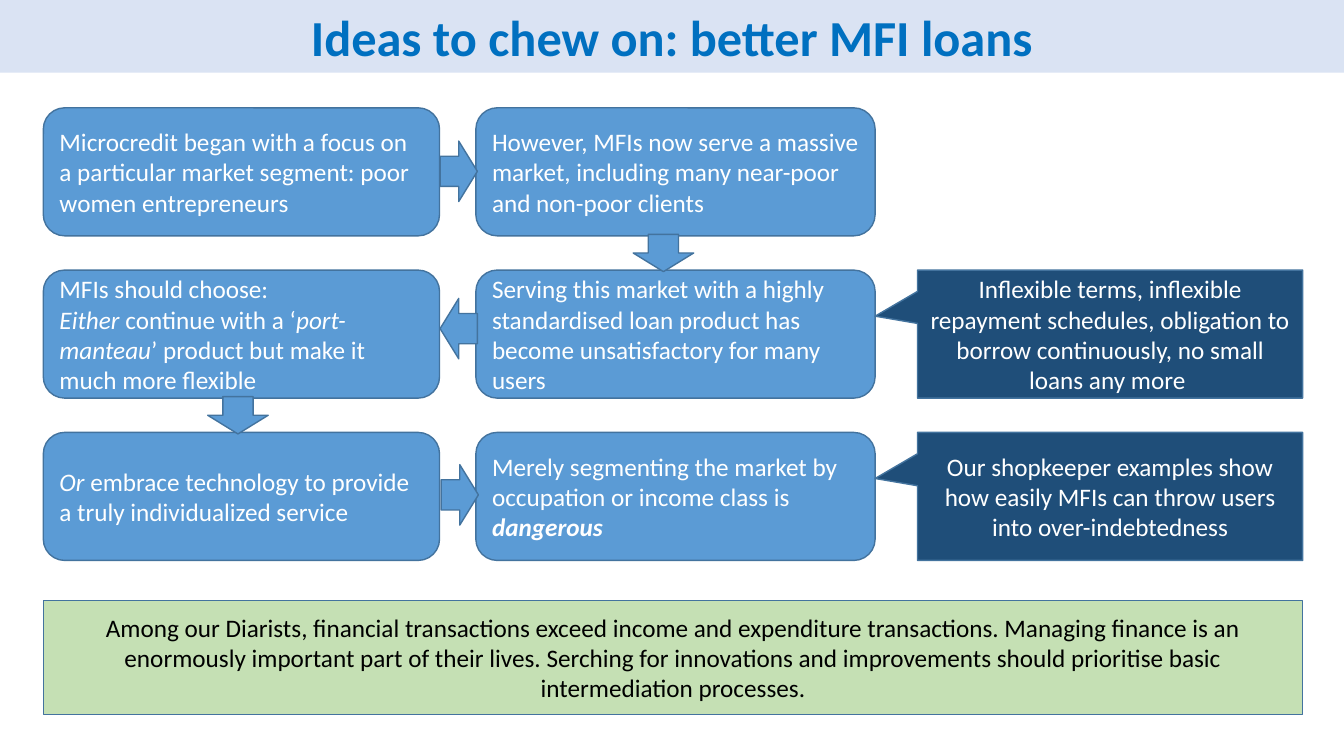
from pptx import Presentation
from pptx.dml.color import RGBColor
from pptx.enum.shapes import MSO_SHAPE as Shape
from pptx.enum.text import MSO_ANCHOR as Anchor, MSO_AUTO_SIZE as Fit, PP_ALIGN as Align
from pptx.util import Inches, Pt

BLUE = RGBColor(0x5B, 0x9B, 0xD5)
NAVY = RGBColor(0x1F, 0x4E, 0x79)
EDGE = RGBColor(0x43, 0x73, 0x9E)
GREEN = RGBColor(0xC5, 0xE0, 0xB4)
PALE = RGBColor(0xDA, 0xE3, 0xF3)
AZURE = RGBColor(0x00, 0x70, 0xC0)
WHITE = RGBColor(0xFF, 0xFF, 0xFF)
BLACK = RGBColor(0x00, 0x00, 0x00)

TITLE = "Ideas to chew on: better MFI loans"
# Each step: column, row, paragraphs of (text, style) runs
STEPS = [
    (0, 0, [[("Microcredit began with a focus on a particular market segment: "
              "poor women entrepreneurs", "")]]),
    (1, 0, [[("However, MFIs now serve a massive market, including many "
              "near-poor and non-poor clients", "")]]),
    (1, 1, [[("Serving this market with a highly standardised loan product "
              "has become unsatisfactory for many users", "")]]),
    (0, 1, [[("MFIs should choose:", "")],
            [("Either ", "i"), ("continue with a ‘", ""), ("port-manteau", "i"),
             ("’ product but make it much more flexible", "")]]),
    (0, 2, [[("Or", "i"),
             (" embrace technology to provide a truly individualized service", "")]]),
    (1, 2, [[("Merely segmenting the market by occupation or income class is ", ""),
             ("dangerous", "bi")]]),
]
NOTES = [
    (1, "Inflexible terms, inflexible repayment schedules, obligation to "
        "borrow continuously, no small loans any more "),
    (2, "Our shopkeeper examples show how easily MFIs can throw users "
        "into over-indebtedness"),
]
CLOSE = ("Among our Diarists, financial transactions exceed income and expenditure "
         "transactions. Managing finance is an enormously important part of their "
         "lives. Serching for innovations and improvements should prioritise basic "
         "intermediation processes.")
ARROWS = [(4.55, 1.7, 0), (6.58, 2.51, 90), (4.55, 3.26, 180),
          (2.36, 4.12, 90), (4.56, 4.91, 0)]

LEFT, TOP, PITCH, HIGH = 0.43, 1.07, 1.61, 1.27
COLS = [(LEFT, 3.93), (4.72, 3.96), (9.1, 3.82)]
LONG, WIDE = 0.37, 0.6


def style(run, size, color, marks=""):
    font = run.font
    font.name, font.size = "Calibri", Pt(size)
    font.color.rgb = color
    font.bold, font.italic = "b" in marks, "i" in marks


def block(slide, kind, box, fill):
    shape = slide.shapes.add_shape(kind, *map(Inches, box))
    shape.shadow.inherit = False
    shape.fill.solid()
    shape.fill.fore_color.rgb = fill
    shape.line.color.rgb = EDGE
    shape.line.width = Pt(1)
    return shape


def write(shape, paras, color, align):
    frame = shape.text_frame
    frame.word_wrap = True
    frame.vertical_anchor = Anchor.MIDDLE
    for i, runs in enumerate(paras):
        para = frame.add_paragraph() if i else frame.paragraphs[0]
        para.alignment = align
        for text, marks in runs:
            run = para.add_run()
            run.text = text
            style(run, 18, color, marks)


def cell(col, row):
    left, width = COLS[col]
    return left, TOP + row * PITCH, width, HIGH


def main():
    """Build the slide on better MFI loans."""
    deck = Presentation()
    deck.slide_width, deck.slide_height = Inches(13.33), Inches(7.5)
    slide = deck.slides.add_slide(deck.slide_layouts[5])

    title = slide.shapes.title
    title.left, title.top = Inches(0), Inches(0)
    title.width, title.height = deck.slide_width, Inches(0.72)
    title.fill.solid()
    title.fill.fore_color.rgb = PALE
    frame = title.text_frame
    frame.text = TITLE
    frame.auto_size = Fit.NONE
    frame.vertical_anchor = Anchor.BOTTOM
    para = frame.paragraphs[0]
    para.alignment, para.line_spacing = Align.CENTER, 0.9
    style(para.runs[0], 36, AZURE, "b")

    for col, row, paras in STEPS:
        step = block(slide, Shape.ROUNDED_RECTANGLE, cell(col, row), BLUE)
        write(step, paras, WHITE, Align.LEFT)

    for x, y, turn in ARROWS:
        box = (x - LONG / 2, y - WIDE / 2, LONG, WIDE)
        block(slide, Shape.RIGHT_ARROW, box, BLUE).rotation = turn

    for row, text in NOTES:
        note = block(slide, Shape.RECTANGULAR_CALLOUT, cell(2, row), NAVY)
        note.adjustments[0], note.adjustments[1] = -0.61, -0.14
        write(note, [[(text, "")]], WHITE, Align.CENTER)

    width = sum(COLS[2]) - LEFT
    close = block(slide, Shape.RECTANGLE, (LEFT, 5.96, width, 1.13), GREEN)
    write(close, [[(CLOSE, "")]], BLACK, Align.CENTER)

    deck.save("out.pptx")


if __name__ == "__main__":
    main()
